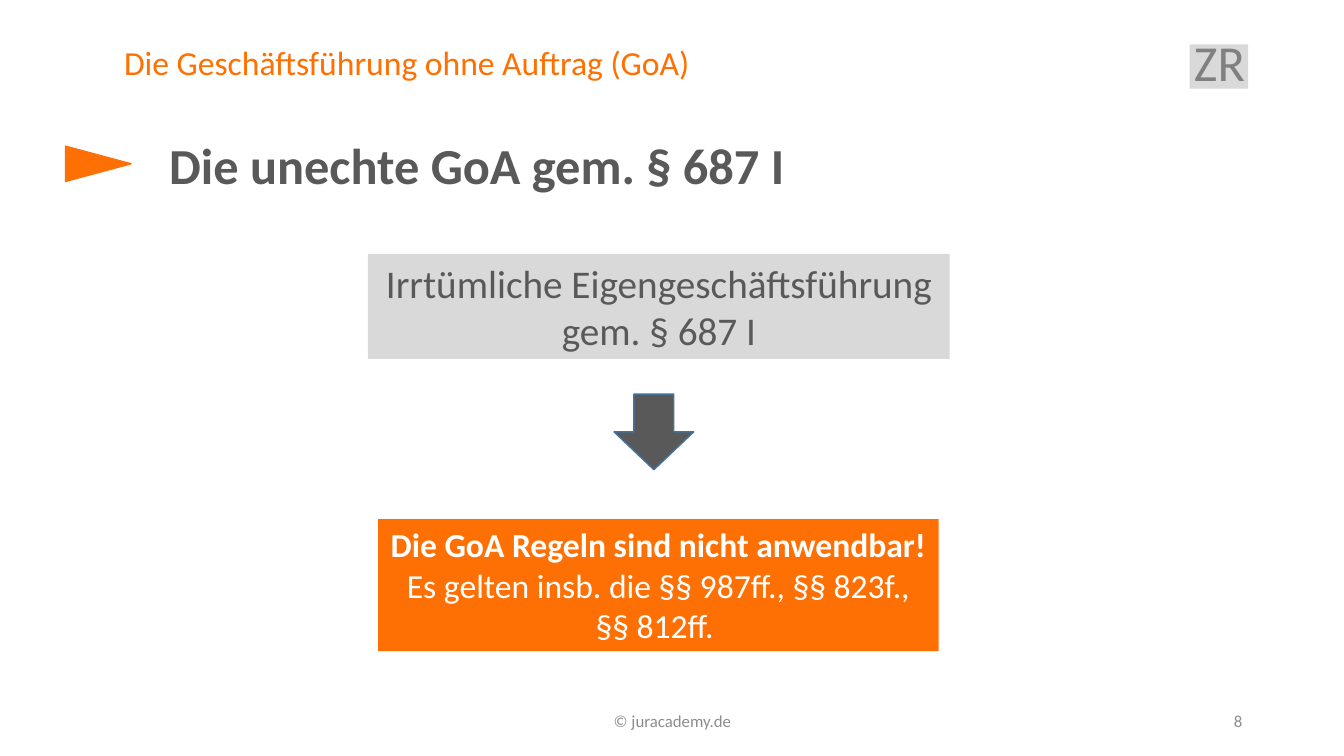
from pptx import Presentation
from pptx.dml.color import RGBColor
from pptx.enum.shapes import MSO_SHAPE
from pptx.enum.text import MSO_ANCHOR, PP_ALIGN
from pptx.util import Inches, Pt

TITLE_ORANGE = RGBColor(0xFF, 0x70, 0x01)
ORANGE = RGBColor(0xFE, 0x70, 0x04)
LIGHT = RGBColor(0xD9, 0xD9, 0xD9)
DARK = RGBColor(0x59, 0x59, 0x59)
GREY = RGBColor(0x80, 0x80, 0x80)
PALE = RGBColor(0x8C, 0x8C, 0x8C)
BLUE = RGBColor(0x43, 0x73, 0x9E)
WHITE = RGBColor(0xFF, 0xFF, 0xFF)
LEFT, MID, RIGHT = PP_ALIGN.LEFT, PP_ALIGN.CENTER, PP_ALIGN.RIGHT
TOP, CENTRE = MSO_ANCHOR.TOP, MSO_ANCHOR.MIDDLE

TITLE = "Die Geschäftsführung ohne Auftrag (GoA)"
TITLE_BOX = (1.13, 0.41, 9.99, 0.47)

# kind, box, turn, fill, line
SHAPES = {
    "badge": (MSO_SHAPE.RECTANGLE, (11.8, 0.44, 0.58, 0.44), 0, LIGHT, None),
    "marker": (MSO_SHAPE.ISOSCELES_TRIANGLE, (0.8, 1.3, 0.35, 0.65), 90, ORANGE, ORANGE),
    "case": (MSO_SHAPE.RECTANGLE, (3.65, 2.52, 5.77, 1.04), 0, LIGHT, None),
    "result": (MSO_SHAPE.RECTANGLE, (3.75, 5.15, 5.56, 1.31), 0, ORANGE, None),
    "arrow": (MSO_SHAPE.DOWN_ARROW, (6.09, 3.91, 0.79, 0.75), 0, DARK, BLUE),
}

# shape: lines as (text, bold), size, colour
LABELS = {
    "case": ([("Irrtümliche Eigengeschäftsführung gem. § 687 I", False)], 28, DARK),
    "result": ([("Die GoA Regeln sind nicht anwendbar!", True),
                ("Es gelten insb. die §§ 987ff., §§ 823f., §§ 812ff. ", False)], 24, WHITE),
}

# box, text, bold, size, colour, alignment, anchor, line spacing
TEXTS = [
    ((4.42, 6.95, 4.5, 0.4), "© juracademy.de", False, 12, PALE, MID, CENTRE, 1.0),
    ((9.42, 6.95, 3, 0.4), "8", False, 12, PALE, RIGHT, CENTRE, 1.0),
    ((11.66, 0.33, 0.87, 0.75), "ZR", False, 36, GREY, MID, TOP, 0.9),
    ((1.58, 1.28, 7.83, 1.01), "Die unechte GoA gem. § 687 I", True, 36, DARK, LEFT, TOP, 1.0),
]


def write(shape, lines, size, color, align, anchor, spacing=1.0):
    frame = shape.text_frame
    frame.word_wrap = True
    frame.vertical_anchor = anchor
    frame.text = "\n".join(text for text, bold in lines)
    for para, (text, bold) in zip(frame.paragraphs, lines):
        para.alignment = align
        para.line_spacing = spacing
        font = para.runs[0].font
        font.name, font.size, font.bold = "Calibri", Pt(size), bold
        font.color.rgb = color


def draw(slide, kind, box, turn, fill, line):
    shape = slide.shapes.add_shape(kind, *map(Inches, box))
    shape.shadow.inherit = False
    shape.rotation = turn
    shape.fill.solid()
    shape.fill.fore_color.rgb = fill
    if line is None:
        shape.line.fill.background()
    else:
        shape.line.color.rgb = line
        shape.line.width = Pt(1)
    return shape


def main():
    prs = Presentation()
    prs.slide_width, prs.slide_height = Inches(13.33), Inches(7.5)
    slide = prs.slides.add_slide(prs.slide_layouts[5])

    title = slide.shapes.title
    title.left, title.top, title.width, title.height = map(Inches, TITLE_BOX)
    write(title, [(TITLE, False)], 24, TITLE_ORANGE, LEFT, CENTRE, 0.9)

    for key, look in SHAPES.items():
        shape = draw(slide, *look)
        if key in LABELS:
            write(shape, *LABELS[key], MID, TOP)

    for box, text, bold, *style in TEXTS:
        write(slide.shapes.add_textbox(*map(Inches, box)), [(text, bold)], *style)

    prs.save("out.pptx")


if __name__ == "__main__":
    main()
